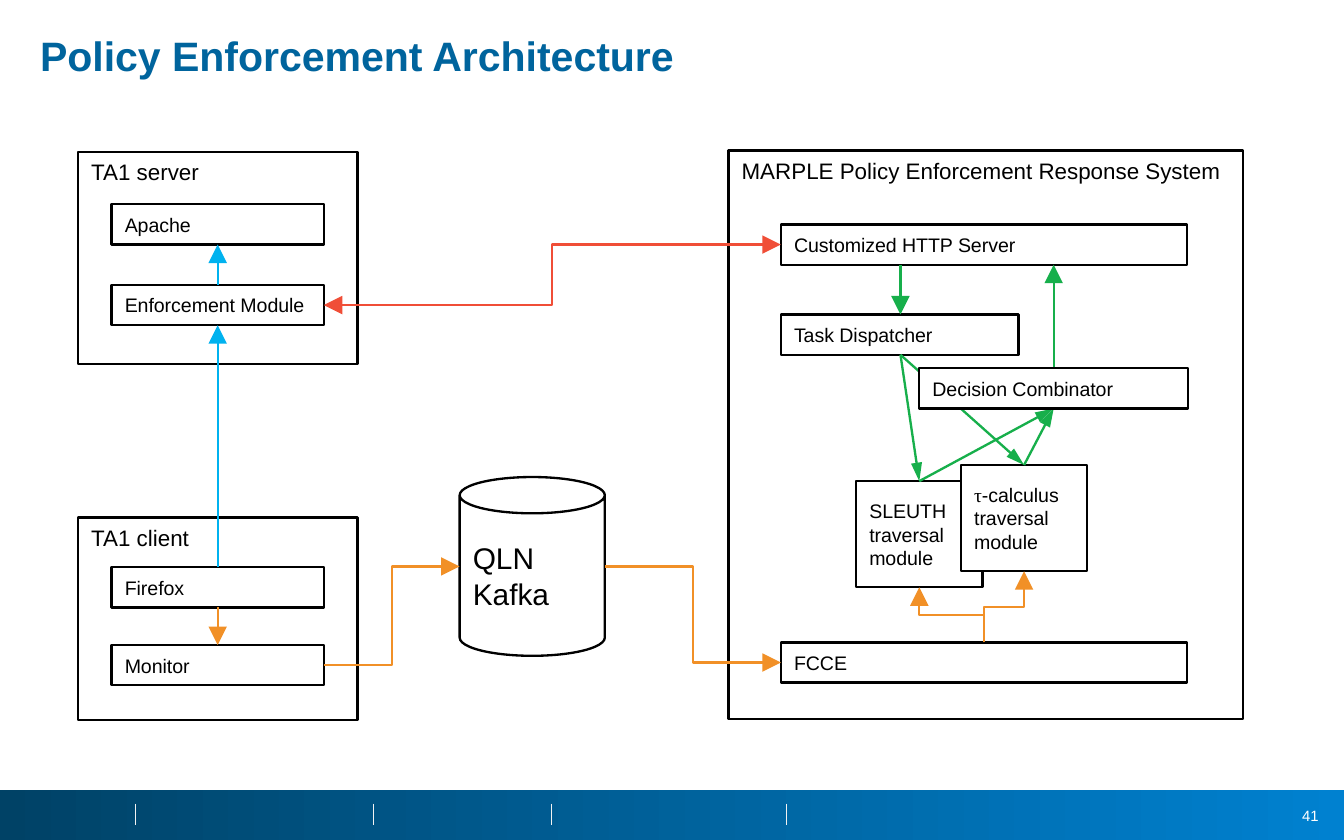
from lxml.etree import SubElement
from pptx import Presentation
from pptx.dml.color import RGBColor
from pptx.enum.shapes import MSO_CONNECTOR as Route, MSO_SHAPE as Preset
from pptx.enum.text import MSO_ANCHOR as Anchor, PP_ALIGN as Align
from pptx.oxml.ns import qn
from pptx.util import Emu, Pt

BLACK, WHITE, TITLE = "000000", "FFFFFF", "00649D"
BLUE, ORANGE, RED, GREEN = "00B2EF", "F19027", "F04E37", "17AF4B"
TOP, LEFT, BOTTOM, RIGHT = range(4)
FONT = "Arial"


def px(length):
    """100 px make one inch."""
    return Emu(length * 9144)


def color(code):
    return RGBColor.from_string(code)


class Diagram:
    line_width = 1.25
    label_size = 10.5

    def __init__(self, page):
        self.page = page

    def label(self, shape, spans, size, ink=BLACK, anchor=Anchor.MIDDLE,
              align=Align.LEFT, bold=False):
        frame = shape.text_frame
        frame.word_wrap = True
        frame.vertical_anchor = anchor
        para = frame.paragraphs[0]
        para.alignment = align
        for text, font in spans:
            span = para.add_run()
            span.text = text
            span.font.name = font
            span.font.size = Pt(size)
            span.font.bold = bold
            span.font.color.rgb = color(ink)
        return para

    def text(self, x, y, width, height, words, size, ink, **style):
        box = self.page.shapes.add_textbox(px(x), px(y), px(width), px(height))
        return box, self.label(box, [(words, FONT)], size, ink, **style)

    def band(self, x, y, width, height, start, end):
        band = self.page.shapes.add_shape(
            Preset.RECTANGLE, px(x), px(y), px(width), px(height))
        band.shadow.inherit = False
        band.line.fill.background()
        band.fill.gradient()
        band.fill.gradient_angle = 0
        for stop, code in zip(band.fill.gradient_stops, (start, end)):
            stop.color.rgb = color(code)

    def box(self, x, y, width, height, spans, size=label_size, fill=None,
            preset=Preset.RECTANGLE, anchor=Anchor.MIDDLE):
        box = self.page.shapes.add_shape(
            preset, px(x), px(y), px(width), px(height))
        box.shadow.inherit = False
        if fill:
            box.fill.solid()
            box.fill.fore_color.rgb = color(fill)
        else:
            box.fill.background()
        box.line.color.rgb = color(BLACK)
        box.line.width = Pt(self.line_width)
        if isinstance(spans, str):
            spans = [(spans, FONT)]
        self.label(box, spans, size, anchor=anchor)
        return box

    def group_box(self, x, y, width, height, words):
        return self.box(x, y, width, height, words, 12, anchor=Anchor.TOP)

    def line(self, x1, y1, x2, y2, ink, width=line_width, heads=(),
             head_width="lg", route=Route.STRAIGHT):
        line = self.page.shapes.add_connector(
            route, px(x1), px(y1), px(x2), px(y2))
        line.line.color.rgb = color(ink)
        line.line.width = Pt(width)
        props = line.element.spPr
        for head in heads:
            SubElement(props.find(qn("a:ln")), qn("a:" + head),
                       type="triangle", w=head_width, len="lg")
        SubElement(props, qn("a:effectLst"))
        return line

    def arrow(self, x1, y1, x2, y2, ink):
        slanted = x1 != x2 and y1 != y2
        self.line(x1, y1, x2, y2, ink, heads=["tailEnd"],
                  head_width="med" if slanted else "lg")

    def elbow(self, start, start_side, end, end_side, ink, heads=("tailEnd",)):
        link = self.line(0, 0, 0, 0, ink, heads=heads, route=Route.ELBOW)
        link.begin_connect(start, start_side)
        link.end_connect(end, end_side)
        # A can has one extra connection site at its top
        for shape, tag in ((start, "a:stCxn"), (end, "a:endCxn")):
            if shape.auto_shape_type == Preset.CAN:
                site = next(link.element.iter(qn(tag)))
                site.set("idx", str(int(site.get("idx")) + 1))
        # An elbow that leaves upwards is a sideways one turned by 270 degrees
        if start_side == TOP:
            across = link.end_x - link.begin_x
            down = link.end_y - link.begin_y
            mid_x = link.begin_x + across // 2
            mid_y = link.begin_y + down // 2
            link.begin_x, link.begin_y = mid_x + down // 2, mid_y - across // 2
            link.end_x, link.end_y = mid_x - down // 2, mid_y + across // 2
            link.element.spPr.find(qn("a:xfrm")).set("rot", str(270 * 60000))


def main():
    deck = Presentation()
    deck.slide_width, deck.slide_height = px(1000), px(625)
    draw = Diagram(deck.slides.add_slide(deck.slide_layouts[6]))

    # Footer band, page number and dividers
    draw.band(0, 588, 1000, 38, "004266", "0081D0")
    draw.text(949, 595, 42, 24, "41", 8, WHITE, align=Align.RIGHT)
    for x in (101, 278, 410, 585):
        draw.line(x, 598, x, 614, "F2F2F2", 0.25)

    # Title
    title, para = draw.text(20, 20, 959, 36, "Policy Enforcement Architecture",
                            22, TITLE, anchor=Anchor.TOP, bold=True)
    title.text_frame.margin_top = px(7)
    para.line_spacing = 0.9

    # Server and client
    draw.group_box(58, 113, 208, 158, "TA1 server")
    draw.group_box(58, 385, 208, 151, "TA1 client")
    host_boxes = {
        words: draw.box(83, y, 158, 30, words)
        for words, y in (("Apache", 152), ("Enforcement Module", 212),
                         ("Firefox", 422), ("Monitor", 480))}
    enforcement = host_boxes["Enforcement Module"]
    monitor = host_boxes["Monitor"]
    draw.arrow(162, 452, 162, 480, ORANGE)
    draw.arrow(162, 422, 162, 242, BLUE)
    draw.arrow(162, 212, 162, 182, BLUE)

    # Message queue
    queue = draw.box(342, 355, 108, 133, "QLN Kafka", 16, preset=Preset.CAN)

    # Response system
    sleuth = draw.box(637, 358, 94, 79, "SLEUTH traversal module", fill=WHITE)
    draw.group_box(542, 112, 383, 423,
                   "MARPLE Policy Enforcement Response System")
    http = draw.box(581, 167, 302, 30, "Customized HTTP Server")
    draw.box(581, 234, 177, 30, "Task Dispatcher")
    fcce = draw.box(581, 478, 302, 30, "FCCE")
    tau = draw.box(715, 346, 94, 79,
                   [("τ", "Times New Roman"),
                    ("-calculus traversal module", FONT)], fill=WHITE)

    # Task flow, passing behind the combinator
    for ends in ((670, 197, 670, 234), (784, 274, 784, 197),
                 (670, 264, 684, 358), (670, 264, 762, 346),
                 (684, 358, 784, 304), (762, 346, 784, 304)):
        draw.arrow(*ends, GREEN)
    draw.box(684, 274, 200, 30, "Decision Combinator", fill=WHITE)

    # Links between the parts
    draw.elbow(monitor, RIGHT, queue, LEFT, ORANGE)
    draw.elbow(queue, RIGHT, fcce, LEFT, ORANGE)
    draw.elbow(enforcement, RIGHT, http, LEFT, RED, ("headEnd", "tailEnd"))
    for module in (tau, sleuth):
        draw.elbow(fcce, TOP, module, BOTTOM, ORANGE)

    deck.save("out.pptx")


if __name__ == "__main__":
    main()
